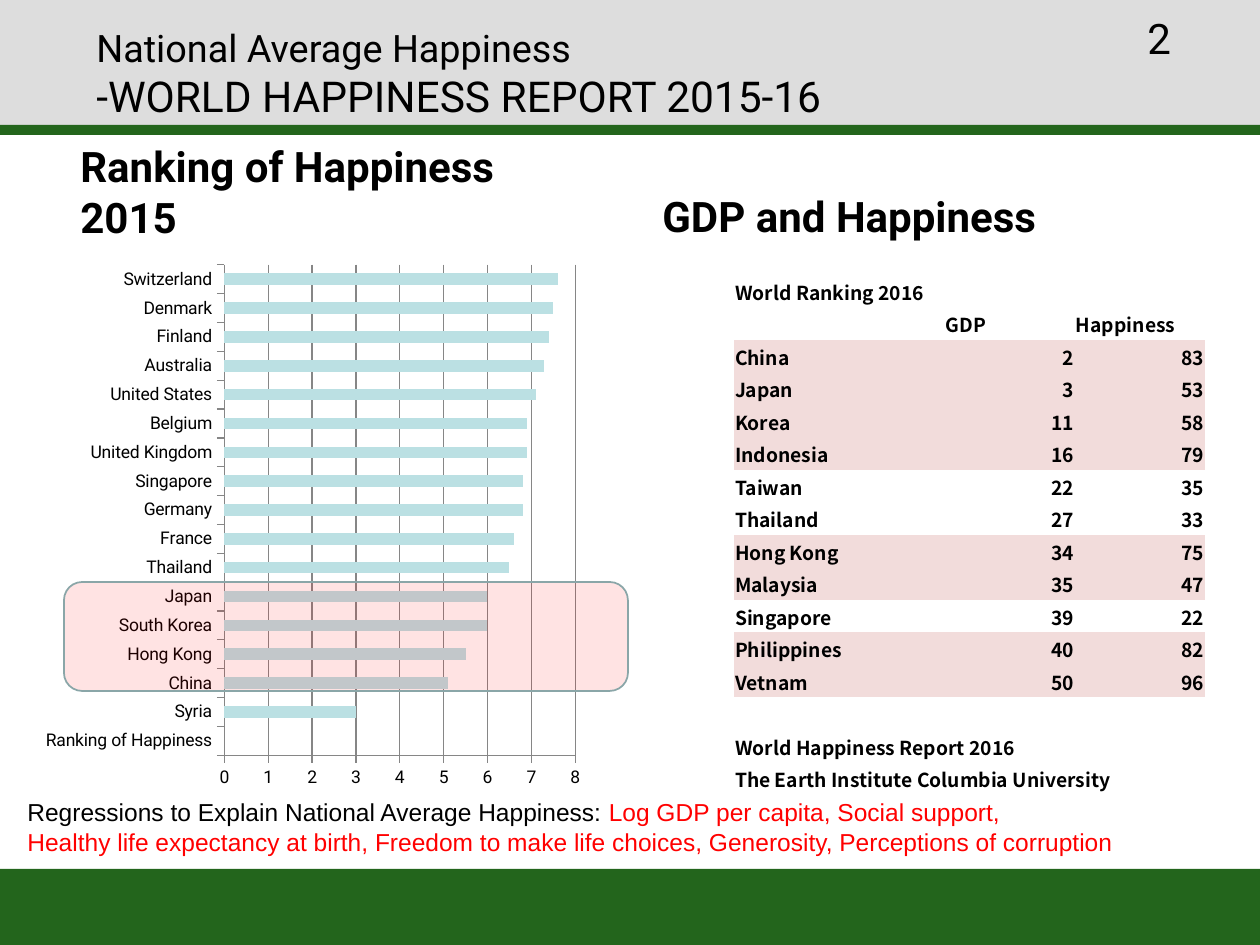
"""Builds a slide on national happiness rankings with a bar chart and a GDP table."""
from lxml import etree
from pptx import Presentation
from pptx.chart.data import CategoryChartData
from pptx.dml.color import RGBColor
from pptx.enum.chart import XL_CHART_TYPE, XL_TICK_MARK
from pptx.enum.shapes import MSO_SHAPE
from pptx.enum.text import MSO_ANCHOR, PP_ALIGN
from pptx.oxml import parse_xml
from pptx.oxml.ns import nsdecls, qn
from pptx.util import Pt

BAR = XL_CHART_TYPE.BAR_CLUSTERED
OUTSIDE = XL_TICK_MARK.OUTSIDE
RECTANGLE, ROUNDED = MSO_SHAPE.RECTANGLE, MSO_SHAPE.ROUNDED_RECTANGLE
TOP, MIDDLE, BOTTOM = MSO_ANCHOR.TOP, MSO_ANCHOR.MIDDLE, MSO_ANCHOR.BOTTOM
RIGHT = PP_ALIGN.RIGHT
BLACK = RGBColor(0x00, 0x00, 0x00)
RED = RGBColor(0xFF, 0x00, 0x00)
GREEN = RGBColor(0x23, 0x65, 0x1C)
SILVER = RGBColor(0xDD, 0xDD, 0xDD)
AQUA = RGBColor(0xBB, 0xE0, 0xE3)
SLATE = RGBColor(0x8A, 0xA6, 0xA8)
GREY = RGBColor(0x86, 0x86, 0x86)
PINK = RGBColor(0xF2, 0xDC, 0xDB)
NO_STYLE = "{2D5ABB26-0587-4C30-8999-92F81FD0307C}"
SCALE = 914400 / 126


def emu(*lengths):
    return [round(length * SCALE) for length in lengths]


def add_text(place, lines, anchor, name, bold=False):
    """Each line is a list of (text, size, colour); a leading \\v breaks the line."""
    box = page.shapes.add_textbox(*emu(*place))
    frame = box.text_frame
    frame.word_wrap = True
    frame.vertical_anchor = anchor
    frame.text = "\n".join("" for _ in lines)
    for para, line in zip(frame.paragraphs, lines):
        for text, size, colour in line:
            if text.startswith("\v"):
                para.add_line_break()
            span = para.add_run()
            span.text = text.lstrip("\v")
            span.font.size = Pt(size)
            span.font.name = name
            span.font.bold = bold
            span.font.color.rgb = colour


deck = Presentation()
deck.slide_width, deck.slide_height = emu(1260, 945)
page = deck.slides.add_slide(deck.slide_layouts[6])

for top, height, colour in [(869, 76, GREEN), (0, 125, SILVER), (125, 10, GREEN)]:
    band = page.shapes.add_shape(RECTANGLE, *emu(0, top, 1260, height))
    band.shadow.inherit = False
    band.fill.solid()
    band.fill.fore_color.rgb = colour
    band.line.fill.background()

add_text((84, 26, 1086, 94),
         [[("National Average Happiness", 21.6, BLACK),
           ("\v-WORLD HAPPINESS REPORT 2015-16", 24.3, BLACK)]], MIDDLE, "Roboto")
add_text((68, 195, 533, 53), [[("Ranking of Happiness 2015", 24, BLACK)]], BOTTOM, "Roboto", True)
add_text((650, 175, 536, 72), [[("GDP and Happiness", 24, BLACK)]], BOTTOM, "Roboto", True)

happiness = [
    ("Ranking of Happiness", None), ("Syria", 3), ("China", 5.1), ("Hong Kong", 5.5),
    ("South Korea", 6), ("Japan", 6), ("Thailand", 6.5), ("France", 6.6),
    ("Germany", 6.8), ("Singapore", 6.8), ("United Kingdom", 6.9), ("Belgium", 6.9),
    ("United States", 7.1), ("Australia", 7.3), ("Finland", 7.4), ("Denmark", 7.5),
    ("Switzerland", 7.6),
]
data = CategoryChartData()
data.categories = [country for country, _ in happiness]
data.add_series("Series 1", [score for _, score in happiness])
chart = page.shapes.add_chart(BAR, *emu(35, 254, 557, 545), data).chart
chart.has_legend = False
chart.has_title = False
chart.font.size = Pt(10)
chart.font.name = "Roboto"
chart.font.color.rgb = BLACK
plot = chart.plots[0]
plot.gap_width = 150
plot.vary_by_categories = False
bars = plot.series[0].format.fill
bars.solid()
bars.fore_color.rgb = AQUA
for axis in (chart.category_axis, chart.value_axis):
    axis.major_tick_mark = OUTSIDE
    axis.format.line.color.rgb = GREY
    axis.format.line.width = Pt(0.75)
scores = chart.value_axis
scores.minimum_scale, scores.maximum_scale, scores.major_unit = 0, 8, 1
scores.tick_labels.number_format = "General"
scores.tick_labels.number_format_is_linked = False
scores.has_major_gridlines = True
scores.major_gridlines.format.line.color.rgb = GREY
scores.major_gridlines.format.line.width = Pt(0.75)
plot_area = chart.element.find(".//" + qn("c:plotArea"))
for layout in plot_area.findall(qn("c:layout")):
    plot_area.remove(layout)
plot_area.insert(0, parse_xml(
    f'<c:layout {nsdecls("c")}><c:manualLayout><c:layoutTarget val="inner"/>'
    '<c:xMode val="edge"/><c:yMode val="edge"/><c:x val="0.34"/><c:y val="0.02"/>'
    '<c:w val="0.63"/><c:h val="0.9"/></c:manualLayout></c:layout>'))

add_text((15, 791, 1229, 72),
         [[("Regressions to Explain National Average Happiness: ", 14, BLACK),
           ("Log GDP per capita, Social support,", 14, RED)],
          [("Healthy life expectancy at birth, Freedom to make life choices, "
            "Generosity, Perceptions of corruption", 14, RED)]], TOP, "Arial")

highlight = page.shapes.add_shape(ROUNDED, *emu(64, 582, 564, 109))
highlight.shadow.inherit = False
highlight.fill.solid()
highlight.fill.fore_color.rgb = RED
red_fill = highlight.fill._xPr.find(".//" + qn("a:srgbClr"))
etree.SubElement(red_fill, qn("a:alpha")).set("val", "11000")
highlight.line.color.rgb = SLATE
highlight.line.width = Pt(1)

rows = [
    ("World Ranking 2016", "", ""), ("", "GDP", "Happiness"),
    ("China", "2", "83"), ("Japan", "3", "53"), ("Korea", "11", "58"),
    ("Indonesia", "16", "79"), ("Taiwan", "22", "35"), ("Thailand", "27", "33"),
    ("Hong Kong", "34", "75"), ("Malaysia", "35", "47"), ("Singapore", "39", "22"),
    ("Philippines", "40", "82"), ("Vetnam", "50", "96"), ("", "", ""),
    ("World Happiness Report 2016", "", ""),
    ("The Earth Institute Columbia University", "", ""),
]
shaded = {"China", "Japan", "Korea", "Indonesia", "Hong Kong", "Malaysia", "Philippines", "Vetnam"}
table = page.shapes.add_table(len(rows), 3, *emu(734, 275, 471, 520)).table
table.first_row = False
table.horz_banding = False
table._tbl.tblPr.find(qn("a:tableStyleId")).text = NO_STYLE
for column, width in zip(table.columns, emu(211, 130, 130)):
    column.width = width
for row_index, row in enumerate(rows):
    for column_index, text in enumerate(row):
        cell = table.cell(row_index, column_index)
        cell.vertical_anchor = MIDDLE
        cell.margin_left, cell.margin_right, cell.margin_top, cell.margin_bottom = emu(1, 1, 1, 0)
        if row[0] in shaded:
            cell.fill.solid()
            cell.fill.fore_color.rgb = PINK
        else:
            cell.fill.background()
        cell.text = text
        para = cell.text_frame.paragraphs[0]
        if text.isdigit():
            para.alignment = RIGHT
        for span in para.runs:
            span.font.size = Pt(11)
            span.font.name = "Noto Sans CJK JP"
            span.font.bold = True
            span.font.color.rgb = BLACK
        if not text:
            etree.SubElement(para._p, qn("a:endParaRPr")).set("sz", "1100")
for row_index, last_column in [(0, 1), (14, 2), (15, 2)]:
    table.cell(row_index, 0).merge(table.cell(row_index, last_column))

add_text((1135, 6, 111, 67), [[("2", 24, BLACK)]], TOP, "Roboto")

deck.save("out.pptx")
